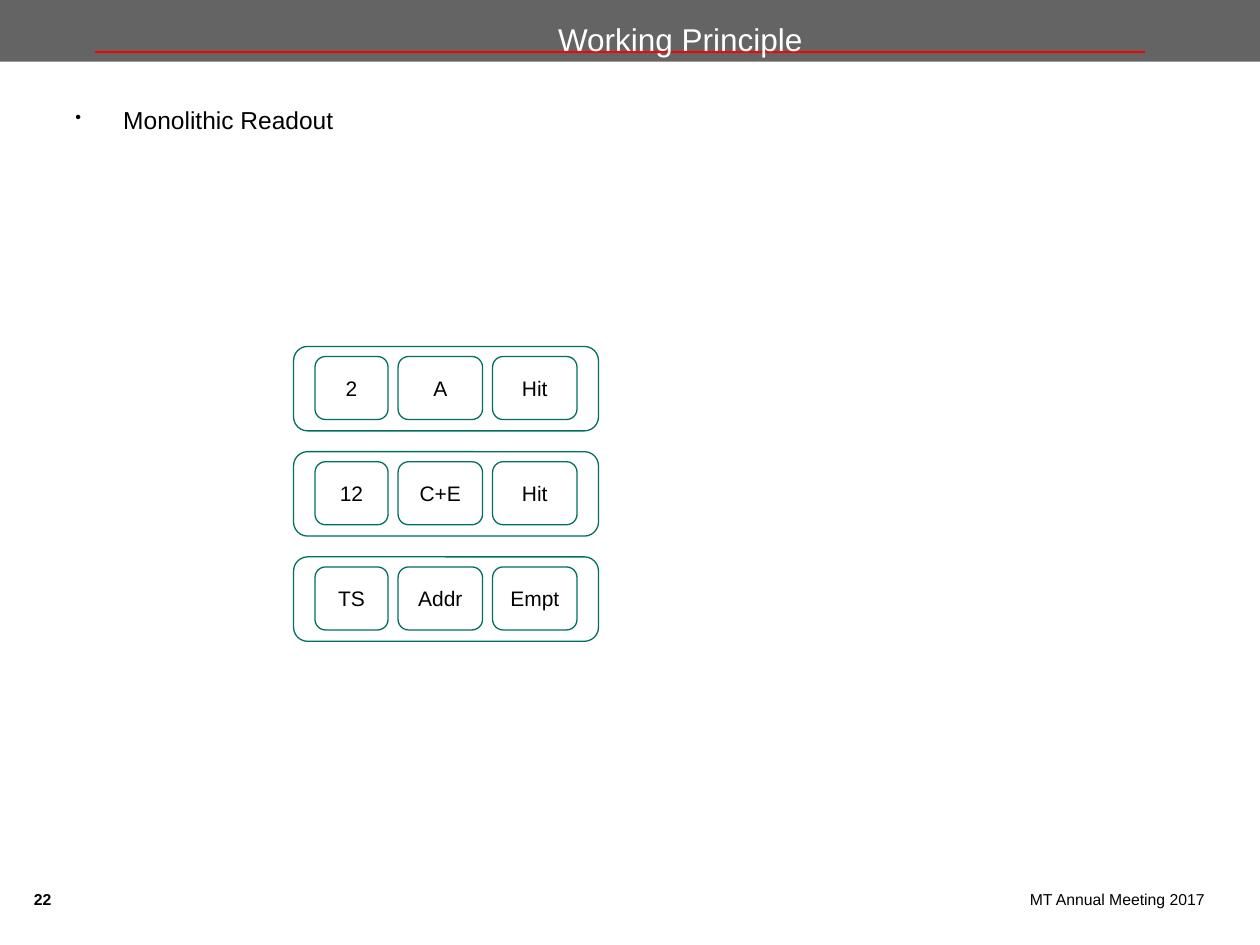
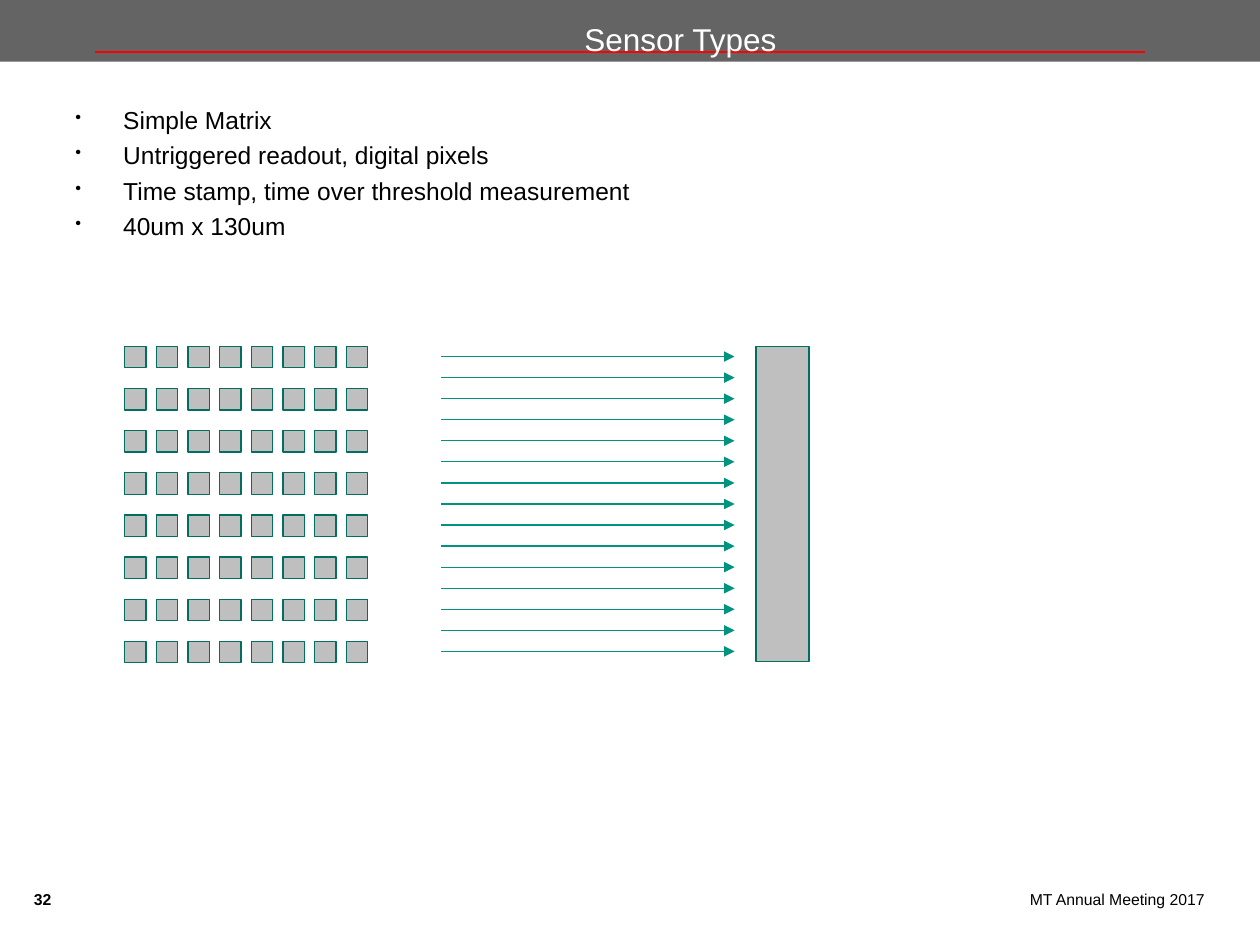
"""Build two slides on the working principle and types of pixel sensors."""
import pptx
import pptx.util
import pptx.dml.color
import pptx.enum.shapes
import pptx.enum.text
import pptx.oxml.ns
from lxml import etree

Inches = pptx.util.Inches
Pt = pptx.util.Pt
SHAPES = pptx.enum.shapes.MSO_SHAPE
ALIGN = pptx.enum.text.PP_ALIGN
ANCHOR = pptx.enum.text.MSO_ANCHOR
qn = pptx.oxml.ns.qn

FONT = "Arial"
COLORS = {"band": "646464", "rule": "FF0000", "title": "FFFFFF", "text": "000000",
          "outline": "006F60", "arrow": "00937F", "pixel": "BFBFBF"}
FOOTER = "MT Annual Meeting 2017"

READOUT = {"title": "Working Principle", "number": "22", "bullets": ["Monolithic Readout"]}
READOUT_ROWS = [("2", "A", "Hit"), ("12", "C+E", "Hit"), ("TS", "Addr", "Empt")]
CELL_COLUMNS = [(2.5, 0.58), (3.16, 0.67), (3.91, 0.67)]

SENSORS = {"title": "Sensor Types", "number": "32",
           "bullets": ["Simple Matrix", "Untriggered readout, digital pixels",
                       "Time stamp, time over threshold measurement", "40um x 130um"]}
MATRIX_SIZE = 8
ARROW_COUNT = 15


def color(name):
    return pptx.dml.color.RGBColor.from_string(COLORS[name])


def spread(first, last, count):
    """Return evenly spaced positions from first to last."""
    return [first + (last - first) * index / (count - 1) for index in range(count)]


def write(frame, lines, size=12, ink="text", bold=False, align=ALIGN.LEFT,
          anchor=ANCHOR.TOP, margins=(0, 0, 0, 0), bullet=False, gap=0):
    frame.word_wrap = True
    frame.auto_size = pptx.enum.text.MSO_AUTO_SIZE.NONE
    frame.vertical_anchor = anchor
    frame.margin_left, frame.margin_top, frame.margin_right, frame.margin_bottom = map(Inches, margins)
    for index, line in enumerate(lines):
        para = frame.add_paragraph() if index else frame.paragraphs[0]
        if bullet:
            properties = para._p.get_or_add_pPr()
            properties.set("marL", str(Inches(0.38)))
            properties.set("indent", str(-Inches(0.38)))
            etree.SubElement(properties, qn("a:buSzPct")).set("val", "70000")
            etree.SubElement(properties, qn("a:buChar")).set("char", "•")
        para.alignment = align
        if index and gap:
            para.space_before = Pt(gap)
        span = para.add_run()
        span.text = line
        span.font.name, span.font.size, span.font.bold = FONT, Pt(size), bold
        span.font.color.rgb = color(ink)


def add_text(page, place, lines, **style):
    box = page.shapes.add_textbox(*map(Inches, place))
    write(box.text_frame, lines, **style)


def add_box(page, kind, place, fill=None, outline="outline"):
    box = page.shapes.add_shape(kind, *map(Inches, place))
    box.shadow.inherit = False
    if fill:
        box.fill.solid()
        box.fill.fore_color.rgb = color(fill)
    else:
        box.fill.background()
    if outline:
        box.line.color.rgb = color(outline)
        box.line.width = Pt(0.75)
    else:
        box.line.fill.background()
    return box


def add_line(page, left, right, top, ink, width, arrow=False):
    line = page.shapes.add_connector(pptx.enum.shapes.MSO_CONNECTOR.STRAIGHT,
                                     *map(Inches, (left, top, right, top)))
    line.line.color.rgb = color(ink)
    line.line.width = Pt(width)
    if arrow:
        etree.SubElement(line.line._get_or_add_ln(), qn("a:tailEnd")).set("type", "triangle")
    etree.SubElement(line.element.spPr, qn("a:effectLst"))


def add_page(deck, content):
    page = deck.slides.add_slide(deck.slide_layouts[5])
    add_text(page, (6.57, 7.06, 2.99, 0.39), [FOOTER], size=9, align=ALIGN.RIGHT)
    add_text(page, (0.27, 7.06, 0.36, 0.24), [content["number"]], size=9, bold=True)
    add_box(page, SHAPES.RECTANGLE, (0, 0, 10, 0.49), fill="band", outline=None)
    add_line(page, 0.75, 9.09, 0.41, "rule", 1)
    title = page.shapes.title
    title.left, title.top, title.width, title.height = map(Inches, (1.3, 0.12, 8.2, 0.38))
    write(title.text_frame, [content["title"]], size=18, ink="title", align=ALIGN.CENTER,
          anchor=ANCHOR.MIDDLE, margins=(0.1, 0.05, 0.1, 0.05))
    title.element.getparent().append(title.element)
    add_text(page, (0.5, 0.76, 9, 0.41), content["bullets"], size=14, bullet=True, gap=3.5,
             margins=(0.1, 0.07, 0.1, 0.05))
    return page


def draw_readout(page):
    for top, labels in zip(spread(2.75, 4.42, len(READOUT_ROWS)), READOUT_ROWS):
        add_box(page, SHAPES.ROUNDED_RECTANGLE, (2.33, top, 2.42, 0.67))
        for (left, width), label in zip(CELL_COLUMNS, labels):
            cell = add_box(page, SHAPES.ROUNDED_RECTANGLE, (left, top + 0.08, width, 0.5))
            write(cell.text_frame, [label], align=ALIGN.CENTER, anchor=ANCHOR.MIDDLE)


def draw_matrix(page):
    for top in spread(2.75, 5.09, MATRIX_SIZE):
        for left in spread(0.99, 2.75, MATRIX_SIZE):
            add_box(page, SHAPES.RECTANGLE, (left, top, 0.17, 0.17), fill="pixel")
    for top in spread(2.83, 5.17, ARROW_COUNT):
        add_line(page, 3.5, 5.83, top, "arrow", 0.75, arrow=True)
    add_box(page, SHAPES.RECTANGLE, (6, 2.75, 0.42, 2.5), fill="pixel")


def main():
    deck = pptx.Presentation()
    deck.slide_width, deck.slide_height = Inches(10), Inches(7.5)
    draw_readout(add_page(deck, READOUT))
    draw_matrix(add_page(deck, SENSORS))
    deck.save("out.pptx")


if __name__ == "__main__":
    main()
